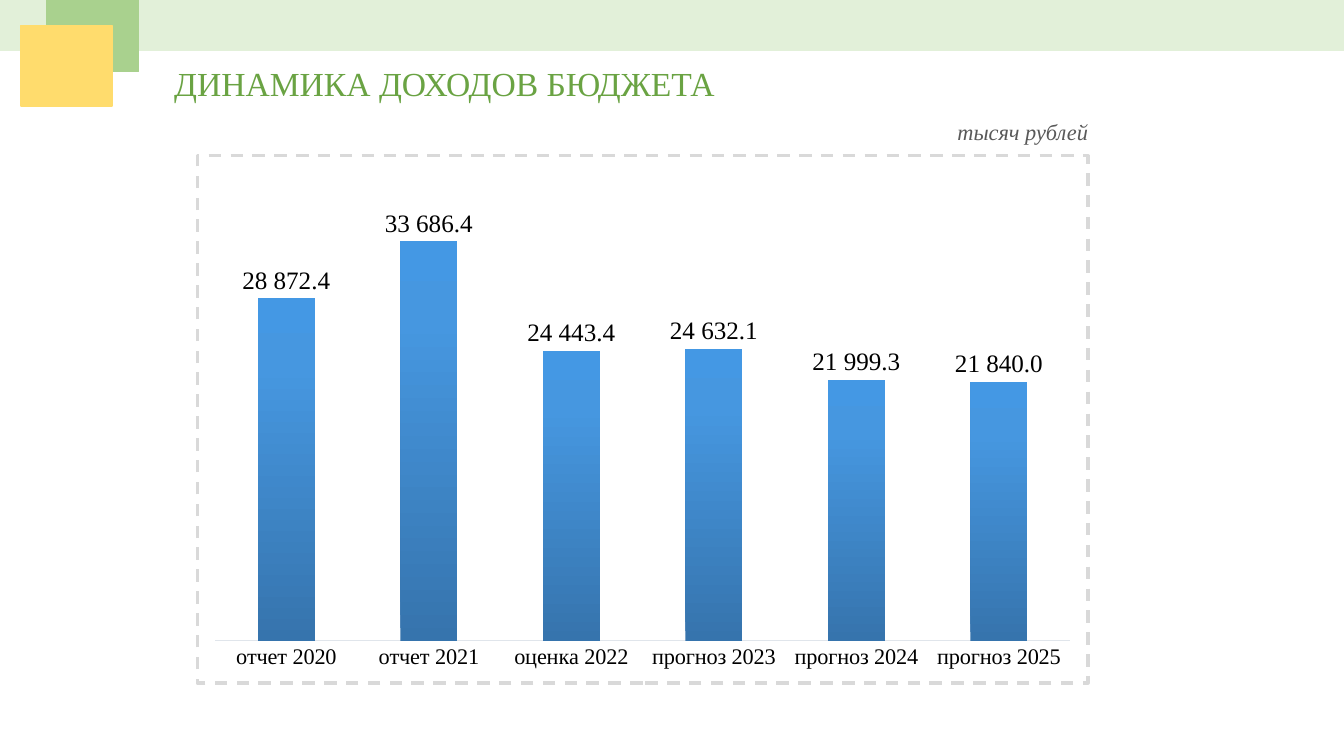
import pptx
import pptx.chart.data
import pptx.dml.color
import pptx.enum.chart
import pptx.enum.dml
import pptx.enum.shapes
import pptx.oxml
import pptx.oxml.ns
import pptx.util
from pptx.util import Cm, Pt

SERIF = "Times New Roman"
NUMBER_FORMAT = r"#\ ##0.0"

# Text, box in cm (left, top, width, height), size, colour, italic
CAPTIONS = [
    ("ДИНАМИКА ДОХОДОВ БЮДЖЕТА", (4.14, 1.47, 14.27, 1.27), 24, "6AA343", False),
    ("тысяч рублей", (23.88, 2.84, 3.86, 0.94), 16, "595959", True),
]
# Box in cm, colour; from back to front
HEADER_BLOCKS = [
    ((0, 0, 33.87, 1.27), "E2F0D9"),
    ((1.19, 0, 2.31, 1.8), "A9D18E"),
    ((0.53, 0.64, 2.29, 2.03), "FFDC6D"),
]
REVENUE = {
    "отчет 2020": 28872.4,
    "отчет 2021": 33686.4,
    "оценка 2022": 24443.4,
    "прогноз 2023": 24632.1,
    "прогноз 2024": 21999.3,
    "прогноз 2025": 21840.0,
}
CHART_BOX = (4.93, 3.89, 22.53, 13.36)
PLOT_AREA = {"x": 0.02, "y": 0.02, "w": 0.96, "h": 0.9}  # shares of the chart
BAR_GRADIENT = [(0, "3674AD"), (80, "4697E0"), (100, "4498E4")]


def rgb(code):
    return pptx.dml.color.RGBColor.from_string(code)


def cm_box(box):
    return [Cm(length) for length in box]


def style_font(font, size, color, name=SERIF):
    font.size = Pt(size)
    font.name = name
    font.color.rgb = rgb(color)


def chart_xml(tag, content):
    """Parse a chart element that holds the given inner XML."""
    spaces = pptx.oxml.ns.nsdecls("c", "a")
    return pptx.oxml.parse_xml(f"<c:{tag} {spaces}>{content}</c:{tag}>")


def add_caption(slide, text, box, size, color, italic):
    frame = slide.shapes.add_textbox(*cm_box(box)).text_frame
    frame.word_wrap = False
    frame.text = text
    font = frame.paragraphs[0].runs[0].font
    style_font(font, size, color)
    font.italic = italic


def add_block(slide, box, color):
    block = slide.shapes.add_shape(
        pptx.enum.shapes.MSO_SHAPE.RECTANGLE, *cm_box(box))
    block.shadow.inherit = False
    block.fill.solid()
    block.fill.fore_color.rgb = rgb(color)
    block.line.color.rgb = rgb(color)
    block.line.width = Pt(1)


def add_revenue_chart(slide):
    revenue = pptx.chart.data.CategoryChartData(number_format=NUMBER_FORMAT)
    revenue.categories = list(REVENUE)
    revenue.add_series("Series 1", list(REVENUE.values()))
    chart = slide.shapes.add_chart(
        pptx.enum.chart.XL_CHART_TYPE.COLUMN_CLUSTERED,
        *cm_box(CHART_BOX), revenue).chart
    chart.has_title = False
    chart.has_legend = False
    style_font(chart.font, 10, "000000", "Calibri")

    years = chart.category_axis
    years.major_tick_mark = pptx.enum.chart.XL_TICK_MARK.NONE
    years.format.line.color.rgb = rgb("E0E5EB")
    years.format.line.width = Pt(0.75)
    style_font(years.tick_labels.font, 16, "000000")

    amounts = chart.value_axis
    amounts.minimum_scale = 0
    amounts.maximum_scale = 40000
    amounts.has_major_gridlines = False
    amounts.tick_labels.number_format = NUMBER_FORMAT
    amounts.tick_labels.number_format_is_linked = False
    amounts.visible = False

    bars = chart.plots[0]
    bars.gap_width = 150
    bars.overlap = -25
    bars.vary_by_categories = False
    bars.has_data_labels = True
    labels = bars.data_labels
    labels.show_value = True
    labels.number_format = NUMBER_FORMAT
    labels.number_format_is_linked = False
    labels.position = pptx.enum.chart.XL_LABEL_POSITION.OUTSIDE_END
    style_font(labels.font, 18, "000000")
    paint_bars(bars.series[0])
    frame_chart(chart)
    place_plot(chart)


def paint_bars(series):
    """Shade the bars from dark at the foot to light at the top."""
    series.format.fill.gradient()
    series.format.fill.gradient_angle = 90
    stops = "".join(
        f'<a:gs pos="{share * 1000}"><a:srgbClr val="{color}"/></a:gs>'
        for share, color in BAR_GRADIENT)
    shading = chart_xml(
        "spPr", f'<a:gradFill rotWithShape="1"><a:gsLst>{stops}</a:gsLst>'
                '<a:lin ang="16200000" scaled="0"/></a:gradFill>'
                "<a:ln><a:noFill/></a:ln>")
    old = series.format.fill._xPr
    old.getparent().replace(old, shading)


def frame_chart(chart):
    """Put a dashed grey border round the chart."""
    border = chart_xml(
        "spPr", f'<a:noFill/><a:ln w="{Pt(2.25)}"><a:solidFill>'
                '<a:srgbClr val="D9D9D9"/></a:solidFill>'
                '<a:prstDash val="dash"/></a:ln>')
    chart.element.find(pptx.oxml.ns.qn("c:chart")).addnext(border)


def place_plot(chart):
    """Fix the inner plot area inside the chart."""
    modes = '<c:layoutTarget val="inner"/><c:xMode val="edge"/><c:yMode val="edge"/>'
    shares = "".join(f'<c:{side} val="{share}"/>' for side, share in PLOT_AREA.items())
    layout = chart_xml("layout", f"<c:manualLayout>{modes}{shares}</c:manualLayout>")
    plot_area = chart.element.find(".//" + pptx.oxml.ns.qn("c:plotArea"))
    for old in plot_area.findall(pptx.oxml.ns.qn("c:layout")):
        plot_area.remove(old)
    plot_area.insert(0, layout)


def main():
    deck = pptx.Presentation()
    deck.slide_width, deck.slide_height = Cm(33.87), Cm(19.05)
    slide = deck.slides.add_slide(deck.slide_layouts[6])
    for block in HEADER_BLOCKS:
        add_block(slide, *block)
    add_revenue_chart(slide)
    for caption in CAPTIONS:
        add_caption(slide, *caption)
    deck.save("out.pptx")


if __name__ == "__main__":
    main()
